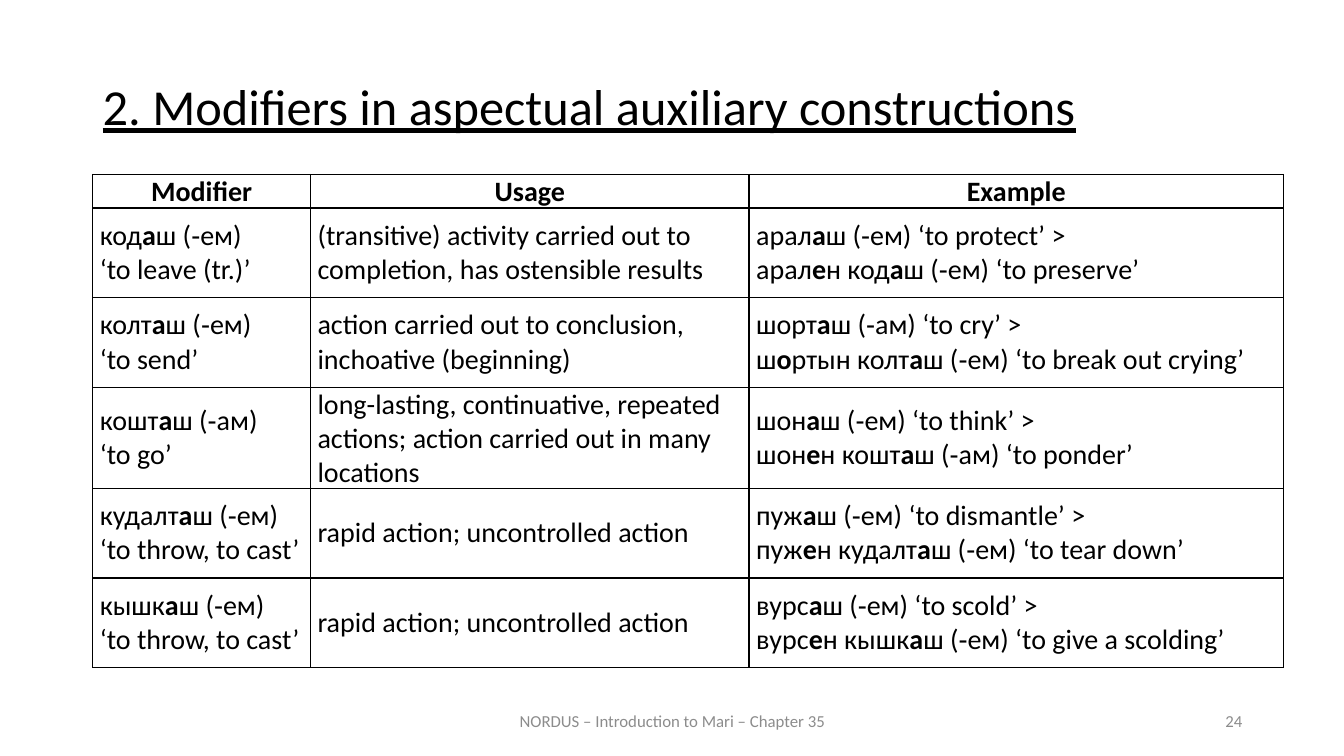
import dataclasses
import pptx
import pptx.dml.color
import pptx.enum.text
import pptx.oxml
import pptx.oxml.ns
import pptx.util

Inches = pptx.util.Inches
Pt = pptx.util.Pt
Align = pptx.enum.text.PP_ALIGN
Anchor = pptx.enum.text.MSO_ANCHOR

FONT = "Calibri"
BLACK = "000000"
GRAY = "8C8C8C"


@dataclasses.dataclass
class Label:
    text: str
    left: float
    top: float
    width: float
    height: float
    style: dict


@dataclasses.dataclass
class Entry:
    word: str
    usage: str
    sample: str


# Asterisks enclose the stressed vowels, which are set in bold
HEADS = Entry("*Modifier*", "*Usage*", "*Example*")
ENTRIES = [
    Entry("код*а*ш (‑ем)\n‘to leave (tr.)’",
          "(transitive) activity carried out to completion, has ostensible results",
          "арал*а*ш (‑ем) ‘to protect’ >\nарал*е*н код*а*ш (‑ем) ‘to preserve’"),
    Entry("колт*а*ш (‑ем)\n‘to send’",
          "action carried out to conclusion, inchoative (beginning)",
          "шорт*а*ш (‑ам) ‘to cry’ >\nш*о*ртын колт*а*ш (‑ем) ‘to break out crying’"),
    Entry("кошт*а*ш (‑ам)\n‘to go’",
          "long-lasting, continuative, repeated actions; action carried out in many locations",
          "шон*а*ш (‑ем) ‘to think’ >\nшон*е*н кошт*а*ш (‑ам) ‘to ponder’"),
    Entry("кудалт*а*ш (‑ем)\n‘to throw, to cast’",
          "rapid action; uncontrolled action",
          "пуж*а*ш (‑ем) ‘to dismantle’ >\nпуж*е*н кудалт*а*ш (‑ем) ‘to tear down’"),
    Entry("кышк*а*ш (‑ем)\n‘to throw, to cast’",
          "rapid action; uncontrolled action",
          "вурс*а*ш (‑ем) ‘to scold’ >\nвурс*е*н кышк*а*ш (‑ем) ‘to give a scolding’"),
]
WIDTHS = [2.16, 4.35, 5.3]
HEAD_ROW = 0.3
BODY_ROW = 0.89

LABELS = [
    Label("2. Modifiers in aspectual auxiliary constructions", 0.92, 0.76, 11.5, 0.83,
          dict(size=36, line=True, align=Align.JUSTIFY, space=0.9, before=12)),
    Label("NORDUS – Introduction to Mari – Chapter 35", 4.42, 6.95, 4.5, 0.4,
          dict(size=12, color=GRAY, align=Align.CENTER, anchor=Anchor.MIDDLE)),
    Label("24", 9.42, 6.95, 3, 0.4,
          dict(size=12, color=GRAY, align=Align.RIGHT, anchor=Anchor.MIDDLE)),
]


def tint(code: str) -> pptx.dml.color.RGBColor:
    return pptx.dml.color.RGBColor.from_string(code)


def write(frame, text: str, *, size: float = 20, color: str = BLACK,
          align=Align.LEFT, anchor=Anchor.TOP, line: bool = False,
          space: float = 1.0, before: float = 0) -> None:
    """Fill a text frame, one paragraph a line."""
    frame.word_wrap = True
    frame.vertical_anchor = anchor
    for i, row in enumerate(text.split("\n")):
        para = frame.add_paragraph() if i else frame.paragraphs[0]
        para.alignment = align
        para.line_spacing = space
        para.space_before = Pt(before)
        for j, part in enumerate(row.split("*")):
            if part:
                run = para.add_run()
                run.text = part
                run.font.name = FONT
                run.font.size = Pt(size)
                run.font.bold = j % 2 == 1
                run.font.underline = line
                run.font.color.rgb = tint(color)


def place(slide, label: Label) -> None:
    box = slide.shapes.add_textbox(Inches(label.left), Inches(label.top),
                                   Inches(label.width), Inches(label.height))
    write(box.text_frame, label.text, **label.style)


def border(cell) -> None:
    """Draw a thin black line on all four sides of a cell."""
    props = cell._tc.get_or_add_tcPr()
    space = pptx.oxml.ns.nsdecls("a")
    for i, side in enumerate(("lnL", "lnR", "lnT", "lnB")):
        props.insert(i, pptx.oxml.parse_xml(
            f'<a:{side} {space} w="{Pt(1)}"><a:solidFill>'
            f'<a:srgbClr val="{BLACK}"/></a:solidFill></a:{side}>'))


def grid(slide) -> None:
    rows = [HEADS] + ENTRIES
    high = [HEAD_ROW] + [BODY_ROW] * len(ENTRIES)
    table = slide.shapes.add_table(len(rows), len(WIDTHS), Inches(0.92), Inches(1.73),
                                   Inches(sum(WIDTHS)), Inches(sum(high))).table
    table.first_row = table.horz_banding = False
    for col, width in zip(table.columns, WIDTHS):
        col.width = Inches(width)
    for i, entry in enumerate(rows):
        table.rows[i].height = Inches(high[i])
        for j, text in enumerate(dataclasses.astuple(entry)):
            cell = table.cell(i, j)
            cell.margin_left = cell.margin_right = Inches(0.07)
            cell.margin_top = cell.margin_bottom = 0
            cell.fill.background()
            border(cell)
            if i == 0:
                align = Align.CENTER
            else:
                align = Align.LEFT if j else Align.JUSTIFY
            write(cell.text_frame, text, align=align)
            cell.vertical_anchor = Anchor.MIDDLE if i else Anchor.TOP


def main() -> None:
    deck = pptx.Presentation()
    deck.slide_width = Inches(13.33)
    deck.slide_height = Inches(7.5)
    slide = deck.slides.add_slide(deck.slide_layouts[6])
    # Title and footer
    for label in LABELS:
        place(slide, label)
    # Table of modifiers
    grid(slide)
    deck.save("out.pptx")


if __name__ == "__main__":
    main()
